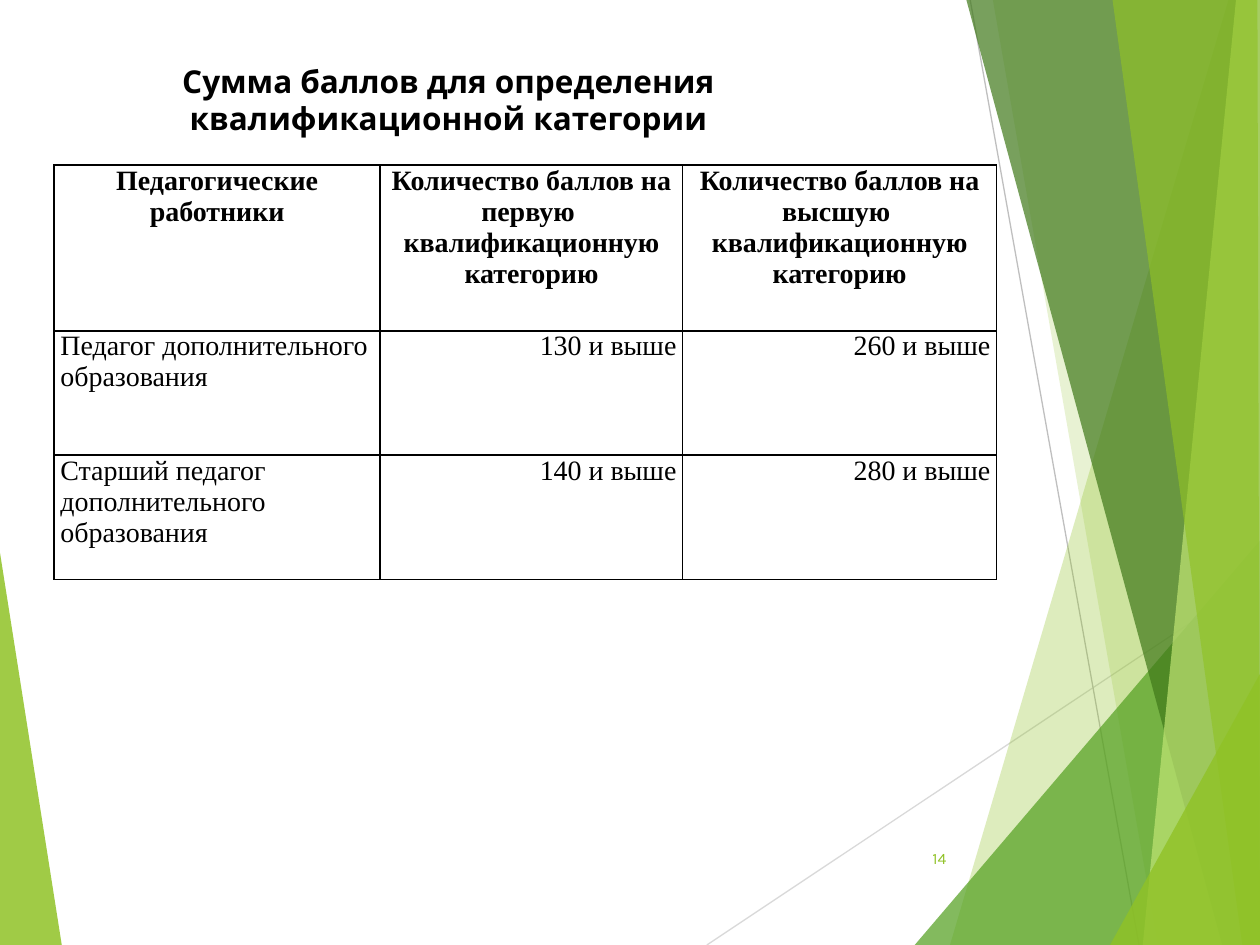
from lxml.etree import SubElement
from pptx import Presentation
from pptx.dml.color import RGBColor
from pptx.enum.shapes import MSO_CONNECTOR
from pptx.enum.text import MSO_ANCHOR, MSO_AUTO_SIZE, PP_ALIGN
from pptx.oxml.ns import qn
from pptx.util import Inches, Pt

W, H = 10, 7.5
COLORS = {
    "lime": "90C226", "green": "54A021", "forest": "3F7819", "pale": "C0E474",
    "light_gray": "D9D9D9", "gray": "BFBFBF", "black": "000000", "white": "FFFFFF",
}

# Colour, opacity in percent, corners in percent of the slide
LEFT_FACET = ("lime", 85, [(0, 58.5), (4.9, 100), (0, 100)])
RIGHT_FACETS = [
    ("lime", 30, [(97.5, 0), (75.4, 100), (100, 100), (100, 0)]),
    ("lime", 20, [(78.8, 0), (91.9, 100), (100, 100), (100, 0)]),
    ("green", 72, [(72.6, 100), (100, 57.2), (100, 100)]),
    ("forest", 70, [(76.7, 0), (97, 100), (100, 100), (100, 0)]),
    ("pale", 70, [(98.1, 0), (90.7, 100), (100, 100), (100, 0)]),
    ("lime", 65, [(88.3, 0), (98.6, 100), (100, 100), (99.8, 0)]),
    ("lime", 80, [(88.1, 100), (100, 71.3), (100, 100)]),
]
RAYS = [
    ("light_gray", (56.1, 100), (100, 61)),
    ("gray", (77, 0), (90.4, 100)),
]
COLUMN_SHARES = [0.346, 0.321, 0.333]
ROW_SHARES = [0.4, 0.3, 0.3]
ROWS = [
    ["Педагогические работники",
     "Количество баллов на первую \nквалификационную категорию",
     "Количество баллов на высшую \nквалификационную категорию"],
    ["Педагог дополнительного образования", "130 и выше", "260 и выше"],
    ["Старший педагог дополнительного образования", "140 и выше", "280 и выше"],
]


def rgb(name):
    return RGBColor.from_string(COLORS[name])


def set_attrs(obj, values):
    for name, value in values.items():
        setattr(obj, name, value)


def write(tf, text, align, color="black", **font):
    p = tf.paragraphs[0]
    p.text, p.alignment = text, align
    for r in p.runs:
        set_attrs(r.font, font)
        r.font.color.rgb = rgb(color)


def at_percent(box, point):
    left, top, width, height = box
    return (Inches(left + width * point[0] / 100),
            Inches(top + height * point[1] / 100))


def add_facet(s, box, color, opacity, corners):
    points = [at_percent(box, corner) for corner in corners]
    builder = s.shapes.build_freeform(*points[0])
    builder.add_line_segments(points[1:], close=True)
    sp = builder.convert_to_shape()
    sp.shadow.inherit = False
    sp.fill.solid()
    sp.fill.fore_color.rgb = rgb(color)
    sp.line.fill.background()
    clr = sp.fill._xPr.find(qn("a:solidFill"))[0]
    SubElement(clr, qn("a:alpha"), val=str(opacity * 1000))


def add_ray(s, box, color, start, end):
    line = s.shapes.add_connector(
        MSO_CONNECTOR.STRAIGHT, *at_percent(box, start), *at_percent(box, end))
    line.line.color.rgb = rgb(color)
    line.line.width = Pt(0.75)
    SubElement(line._element.spPr, qn("a:effectLst"))


def add_backdrop(s, box):
    add_facet(s, box, *LEFT_FACET)
    for ray in RAYS:
        add_ray(s, box, *ray)
    for facet in RIGHT_FACETS:
        add_facet(s, box, *facet)


def add_text(s, box, text, align, frame, **font):
    tf = s.shapes.add_textbox(*map(Inches, box)).text_frame
    set_attrs(tf, {"word_wrap": True, **frame})
    write(tf, text, align, name="Karla", **font)


def add_borders(cell):
    tc_pr = cell._tc.get_or_add_tcPr()
    for i, side in enumerate(("lnL", "lnR", "lnT", "lnB")):
        ln = tc_pr.makeelement(qn(f"a:{side}"), {"w": str(Pt(1))})
        fill = SubElement(ln, qn("a:solidFill"))
        SubElement(fill, qn("a:srgbClr"), val=COLORS["black"])
        tc_pr.insert(i, ln)


def add_score_table(s, box):
    frame = s.shapes.add_table(len(ROWS), len(ROWS[0]), *map(Inches, box))
    table = frame.table
    set_attrs(table, {"first_row": False, "horz_banding": False})
    for column, share in zip(table.columns, COLUMN_SHARES):
        column.width = Inches(box[2] * share)
    for row, share in zip(table.rows, ROW_SHARES):
        row.height = Inches(box[3] * share)
    margins = {"margin_left": Inches(0.05), "margin_right": Inches(0.05),
               "margin_top": 0, "margin_bottom": 0}
    for i, texts in enumerate(ROWS):
        for j, text in enumerate(texts):
            cell = table.cell(i, j)
            set_attrs(cell, margins)
            cell.fill.background()
            add_borders(cell)
            body_align = PP_ALIGN.RIGHT if j else PP_ALIGN.LEFT
            write(cell.text_frame, text, body_align if i else PP_ALIGN.CENTER,
                  name="Times New Roman", size=Pt(16), bold=i == 0)


def main():
    prs = Presentation()
    set_attrs(prs, {"slide_width": Inches(W), "slide_height": Inches(H)})
    s = prs.slides.add_slide(prs.slide_layouts[6])
    s.background.fill.solid()
    s.background.fill.fore_color.rgb = rgb("white")

    add_backdrop(s, (0, 0, W, H))
    add_text(s, (7.05, 6.61, 0.56, 0.4), "14", PP_ALIGN.RIGHT,
             {"vertical_anchor": MSO_ANCHOR.MIDDLE}, color="lime", size=Pt(9))
    add_text(s, (1.06, 0.44, 5, 0.71),
             "Сумма баллов для определения квалификационной категории",
             PP_ALIGN.CENTER, {"auto_size": MSO_AUTO_SIZE.SHAPE_TO_FIT_TEXT},
             size=Pt(18), bold=True)
    add_score_table(s, (0.43, 1.31, 7.48, 3.29))
    prs.save("out.pptx")


if __name__ == "__main__":
    main()
